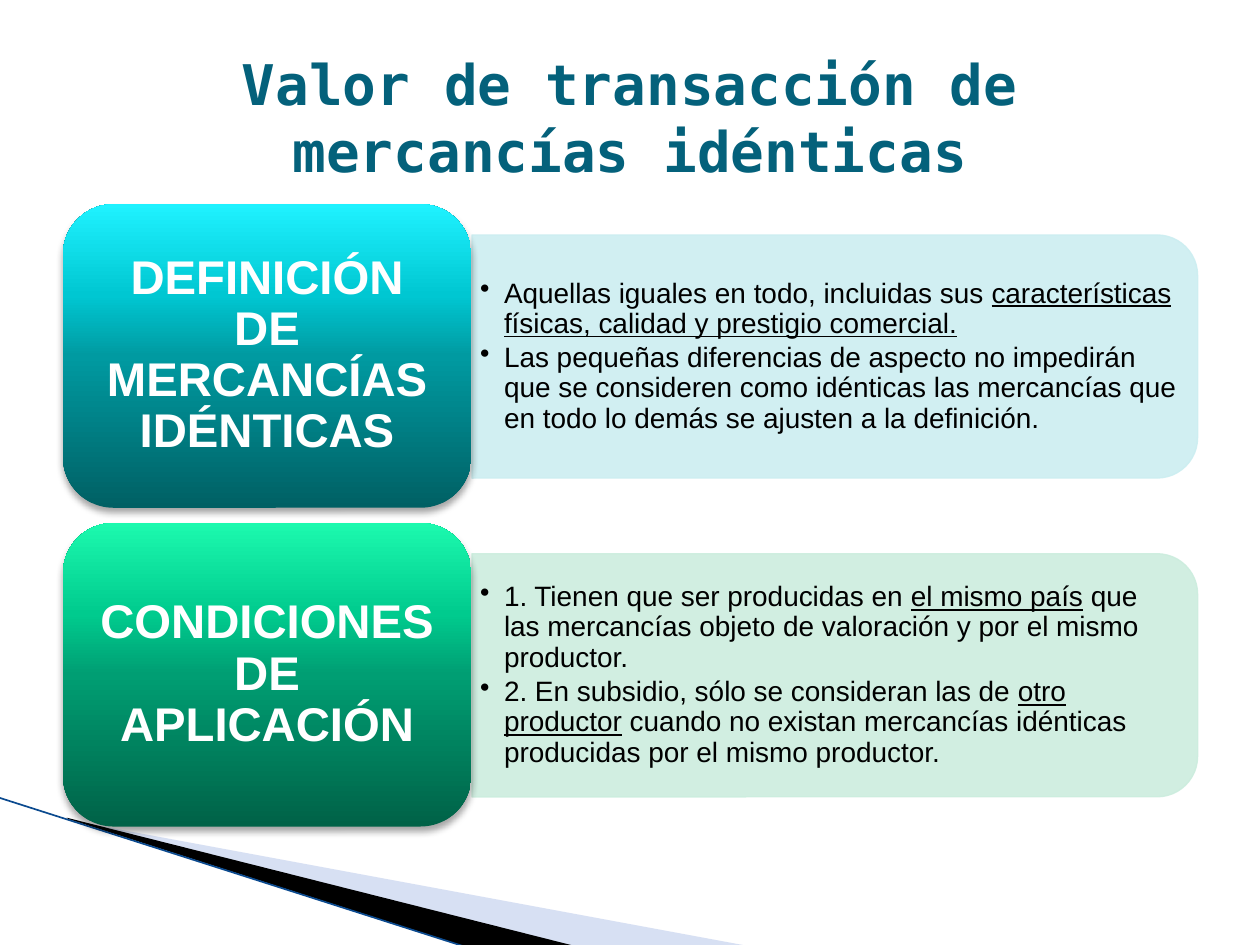
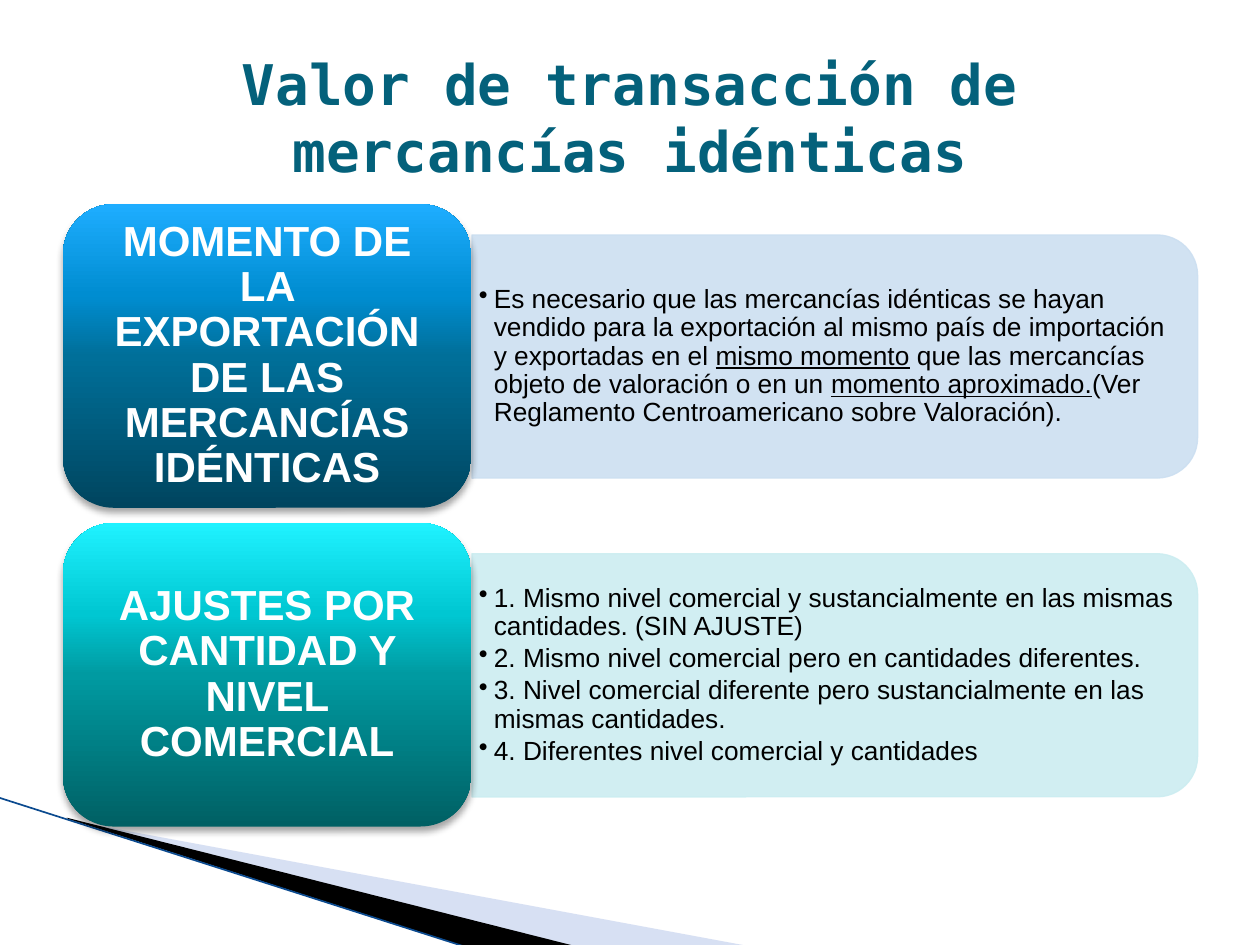
from lxml import etree
from pptx import Presentation
from pptx.dml.color import RGBColor
from pptx.enum.shapes import MSO_CONNECTOR as CONNECTOR, MSO_SHAPE as SHAPE
from pptx.enum.text import MSO_ANCHOR as ANCHOR, PP_ALIGN as ALIGN
from pptx.oxml import parse_xml
from pptx.oxml.ns import nsdecls, qn
from pptx.util import Inches, Pt

WIDTH, HEIGHT = 10, 7.5
MARGIN = WIDTH * 0.05
CONTENT_W = WIDTH - 2 * MARGIN
TILE_W = CONTENT_W * 0.36
TILE_H = 2.41
PANEL_W = CONTENT_W - TILE_W
PANEL_H = TILE_H * 0.8
ROW_TOP = 1.62
ROW_PITCH = TILE_H * 1.05
TEXT_W, TEXT_H = 5.67, 1.74

SANS = "Arial"
MONO = "DejaVu Sans Mono"
BLACK = RGBColor(0x00, 0x00, 0x00)
WHITE = RGBColor(0xFF, 0xFF, 0xFF)
TITLE_TEAL = RGBColor(0x04, 0x61, 0x7B)
SWOOSH_BLUE = RGBColor(0x9D, 0xB2, 0xE1)
EDGE_BLUE = RGBColor(0x0B, 0x4A, 0x8F)
PALE_CYAN = RGBColor(0xCC, 0xEE, 0xF1)
PALE_GREEN = RGBColor(0xCC, 0xED, 0xDE)
PALE_BLUE = RGBColor(0xCC, 0xDF, 0xF1)
PALE_AQUA = RGBColor(0xCC, 0xED, 0xF1)

STOPS = (0, 50, 70, 100)
CYAN = [RGBColor.from_string(c) for c in ("006064", "009AA1", "00C7D2", "1FF2FF")]
GREEN = [RGBColor.from_string(c) for c in ("006247", "009E73", "00CB8E", "1CF9AE")]
BLUE = [RGBColor.from_string(c) for c in ("00455F", "006F99", "008DD1", "1EADFF")]

TITLE = "Valor de transacción de mercancías idénticas"
# Each slide: tile size, body size, bullet indent, tile insets, body inset, rows.
# Underscores enclose underlined words.
SLIDES = [
    (27, 16, 0.19, (0.11, 0.06), 0.07, [
        ("DEFINICIÓN DE MERCANCÍAS IDÉNTICAS", CYAN, PALE_CYAN, [
            "Aquellas iguales en todo, incluidas sus _características físicas, "
            "calidad y prestigio comercial._",
            "Las pequeñas diferencias de aspecto no impedirán que se consideren como "
            "idénticas las mercancías que en todo lo demás se ajusten a la definición.",
        ]),
        ("CONDICIONES DE APLICACIÓN", GREEN, PALE_GREEN, [
            "1. Tienen que ser producidas en _el mismo país_ que las mercancías objeto "
            "de valoración y por el mismo productor.",
            "2. En subsidio, sólo se consideran las de _otro productor_ cuando no "
            "existan mercancías idénticas producidas por el mismo productor.",
        ]),
    ]),
    (24, 15, 0.12, (0.1, 0.05), 0.06, [
        ("MOMENTO DE LA EXPORTACIÓN DE LAS MERCANCÍAS IDÉNTICAS", BLUE, PALE_BLUE, [
            "Es necesario que las mercancías idénticas se hayan vendido para la "
            "exportación al mismo país de importación y exportadas en el _mismo "
            "momento_ que las mercancías objeto de valoración o en un _momento "
            "aproximado._(Ver Reglamento Centroamericano sobre Valoración).",
        ]),
        ("AJUSTES POR CANTIDAD Y NIVEL COMERCIAL", CYAN, PALE_AQUA, [
            "1. Mismo nivel comercial y sustancialmente en las mismas cantidades. "
            "(SIN AJUSTE)",
            "2. Mismo nivel comercial pero en cantidades diferentes.",
            "3. Nivel comercial diferente pero sustancialmente en las mismas cantidades.",
            "4. Diferentes nivel comercial y cantidades",
        ]),
    ]),
]


def box(x, y, w, h):
    return [Inches(round(v, 2)) for v in (x, y, w, h)]


def set_alpha(fill_parent, percent):
    """Make the solid colour directly under the given element translucent."""
    clr = fill_parent.find(qn("a:solidFill")).find(qn("a:srgbClr"))
    etree.SubElement(clr, qn("a:alpha")).set("val", str(percent * 1000))


def set_bullet(p, indent):
    pPr = p._p.get_or_add_pPr()
    pPr.set("marL", str(Inches(indent)))
    pPr.set("indent", str(-Inches(indent)))
    etree.SubElement(pPr, qn("a:buChar")).set("char", "•")


def write(tf, paragraphs, size, color, font=SANS, bold=False, align=ALIGN.LEFT,
          spacing=None, after=None, bullet=None, insets=None):
    tf.word_wrap = True
    tf.vertical_anchor = ANCHOR.MIDDLE
    if insets:
        tf.margin_left = tf.margin_right = Inches(insets[0])
        tf.margin_top = tf.margin_bottom = Inches(insets[1])
    for i, text in enumerate(paragraphs):
        p = tf.add_paragraph() if i else tf.paragraphs[0]
        if bullet:
            set_bullet(p, bullet)
        p.alignment = align
        if spacing:
            p.line_spacing = spacing
        if after:
            p.space_after = Pt(after)
        for j, part in enumerate(text.split("_")):
            if not part:
                continue
            r = p.add_run()
            r.text = part
            r.font.name, r.font.size, r.font.bold = font, Pt(size), bold
            r.font.color.rgb = color
            if j % 2:
                r.font.underline = True


def add_polygon(s, points, color):
    start, *rest = [(Inches(x), Inches(y)) for x, y in points]
    builder = s.shapes.build_freeform(*start)
    builder.add_line_segments(rest)
    sp = builder.convert_to_shape()
    sp.shadow.inherit = False
    sp.fill.solid()
    sp.fill.fore_color.rgb = color
    sp.line.fill.background()
    return sp


def add_swoosh(s, layout):
    """Draw the corner decoration and hand it to the layout all slides share."""
    pale = add_polygon(s, [(0.55, 6.51), (5.95, 7.51), (4.56, 7.51), (0.55, 6.5)],
                       SWOOSH_BLUE)
    set_alpha(pale._element.spPr, 40)
    dark = add_polygon(s, [(0.53, 6.49), (4.57, 7.51), (3.72, 7.52), (0.54, 6.5)],
                       BLACK)
    edge = s.shapes.add_connector(CONNECTOR.STRAIGHT, *box(-0.01, 6.33, 3.71, 7.52))
    edge.line.color.rgb = EDGE_BLUE
    edge.line.width = Pt(0.95)
    etree.SubElement(edge._element.spPr, qn("a:effectLst"))
    for part in (pale, dark, edge):
        layout.shapes._spTree.append(part._element)


def add_panel(s, middle, color):
    """Pale panel rounded at its right end: an upright shape turned a quarter."""
    center = MARGIN + TILE_W + PANEL_W / 2
    sp = s.shapes.add_shape(SHAPE.ROUND_2_SAME_RECTANGLE, *box(
        center - PANEL_H / 2, middle - PANEL_W / 2, PANEL_H, PANEL_W))
    sp.rotation = 90
    sp.shadow.inherit = False
    sp.fill.solid()
    sp.fill.fore_color.rgb = color
    sp.line.color.rgb = color
    sp.line.width = Pt(0.75)
    set_alpha(sp._element.spPr, 90)
    set_alpha(sp._element.spPr.find(qn("a:ln")), 90)


def add_tile(s, top, colors):
    sp = s.shapes.add_shape(SHAPE.ROUNDED_RECTANGLE, *box(MARGIN, top, TILE_W, TILE_H))
    stops = "".join(f'<a:gs pos="{pos * 1000}"><a:srgbClr val="{c}"/></a:gs>'
                    for pos, c in zip(STOPS, colors))
    spPr = sp._element.spPr
    spPr.find(qn("a:prstGeom")).addnext(parse_xml(
        f'<a:gradFill {nsdecls("a")} rotWithShape="1"><a:gsLst>{stops}</a:gsLst>'
        '<a:lin ang="16200000" scaled="0"/></a:gradFill>'))
    sp.line.fill.background()
    sp.shadow.inherit = False
    spPr.find(qn("a:effectLst")).append(parse_xml(
        f'<a:outerShdw {nsdecls("a")} blurRad="{Pt(4)}" dist="{Pt(3)}" dir="5400000" '
        'rotWithShape="0"><a:srgbClr val="000000"><a:alpha val="35000"/></a:srgbClr>'
        '</a:outerShdw>'))
    return sp


def add_slide(prs, layout, tile_size, body_size, indent, tile_insets, body_inset, rows):
    s = prs.slides.add_slide(layout)
    write(s.shapes.title.text_frame, [TITLE], 32, TITLE_TEAL, font=MONO, bold=True,
          align=ALIGN.CENTER)
    for i, (heading, gradient, pale, items) in enumerate(rows):
        top = ROW_TOP + i * ROW_PITCH
        middle = top + TILE_H / 2
        add_panel(s, middle, pale)
        body = s.shapes.add_textbox(*box(MARGIN + TILE_W, middle - TEXT_H / 2,
                                         TEXT_W, TEXT_H))
        write(body.text_frame, items, body_size, BLACK, spacing=0.9,
              after=body_size * 0.15, bullet=indent, insets=(body_inset, 0.03))
        tile = add_tile(s, top, gradient)
        write(tile.text_frame, [heading], tile_size, WHITE, bold=True,
              align=ALIGN.CENTER, spacing=0.9, after=tile_size * 0.35,
              insets=tile_insets)
    return s


def main():
    prs = Presentation()
    prs.slide_width, prs.slide_height = Inches(WIDTH), Inches(HEIGHT)
    layout = prs.slide_layouts.get_by_name("Title Only")
    title = layout.placeholders[0]
    title.left, title.top, title.width, title.height = box(
        MARGIN, HEIGHT * 0.04, CONTENT_W, HEIGHT / 6)
    slides = [add_slide(prs, layout, *content) for content in SLIDES]
    add_swoosh(slides[0], layout)
    prs.save("out.pptx")


if __name__ == "__main__":
    main()
